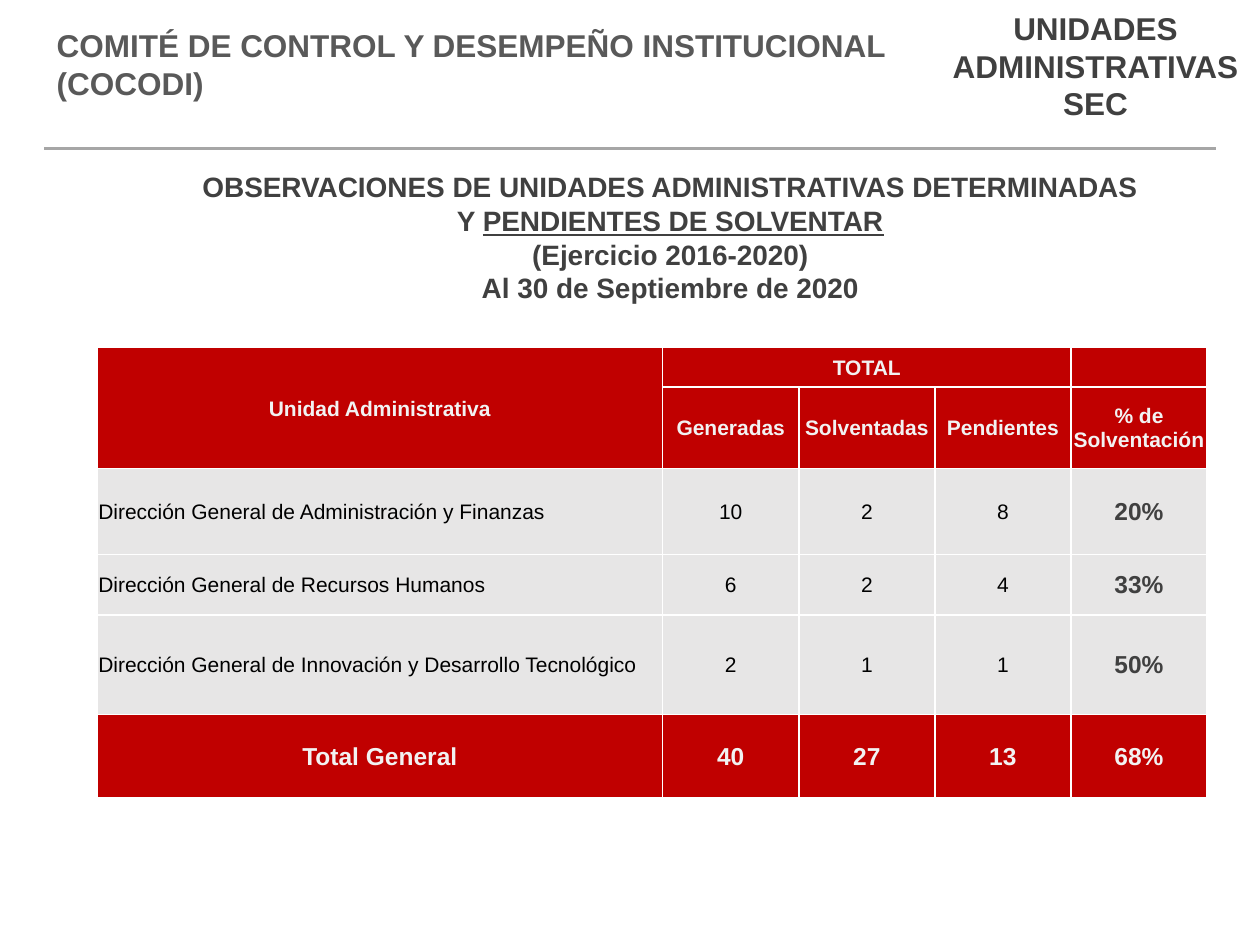
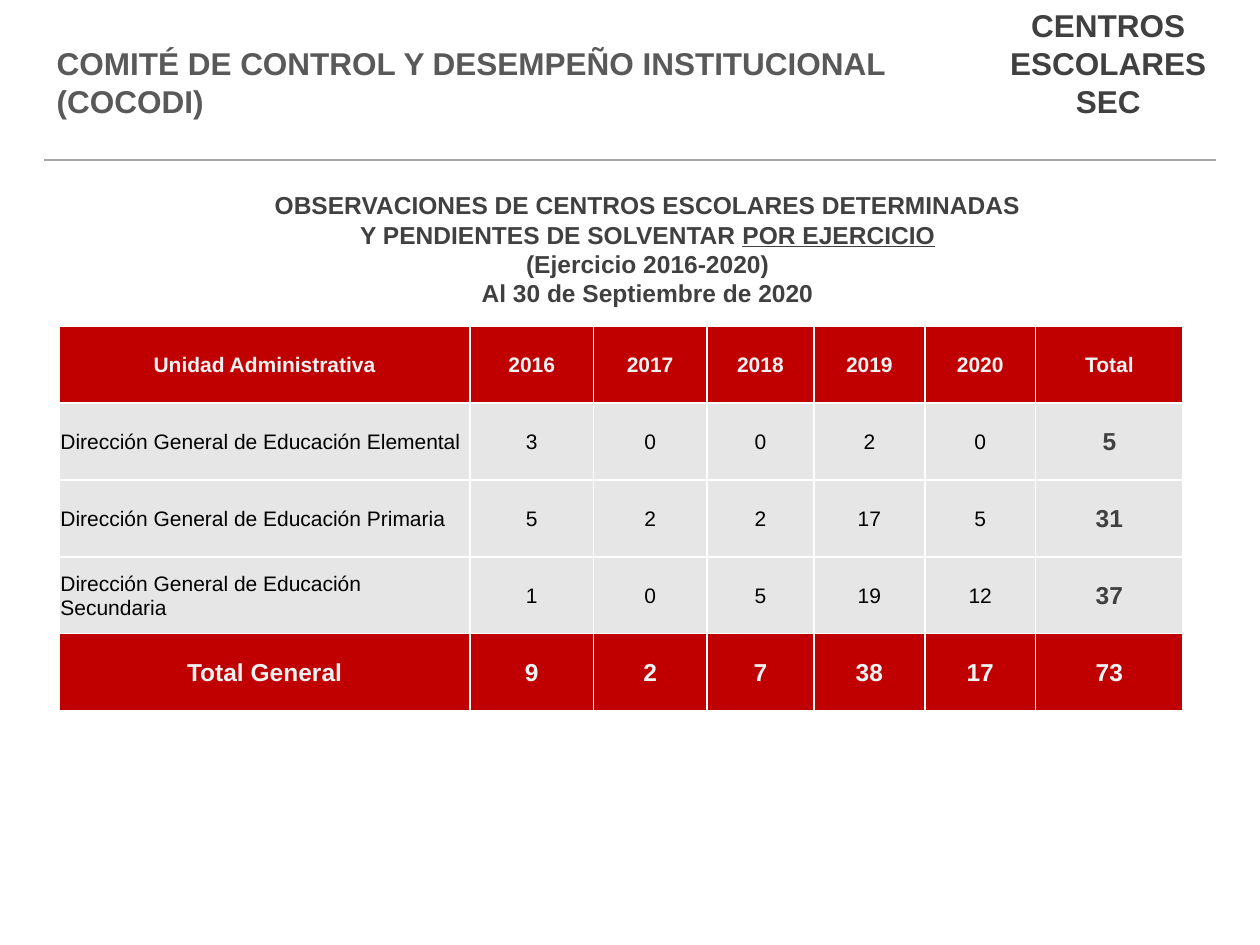
from lxml import etree
from pptx import Presentation
from pptx.dml.color import RGBColor
from pptx.enum.shapes import MSO_CONNECTOR, MSO_SHAPE
from pptx.enum.text import MSO_ANCHOR, MSO_AUTO_SIZE, PP_ALIGN
from pptx.oxml.ns import qn
from pptx.util import Inches, Pt

LEFT, CENTER = PP_ALIGN.LEFT, PP_ALIGN.CENTER
TOP, MIDDLE = MSO_ANCHOR.TOP, MSO_ANCHOR.MIDDLE
RECTANGLE, STRAIGHT = MSO_SHAPE.RECTANGLE, MSO_CONNECTOR.STRAIGHT
NO_FIT, GROW = MSO_AUTO_SIZE.NONE, MSO_AUTO_SIZE.SHAPE_TO_FIT_TEXT

WHITE = RGBColor(0xFF, 0xFF, 0xFF)
BLACK = RGBColor(0x00, 0x00, 0x00)
RED = RGBColor(0xC0, 0x00, 0x00)
PALE = RGBColor(0xF2, 0xF2, 0xF2)
BODY_GRAY = RGBColor(0xE7, 0xE6, 0xE6)
RULE_GRAY = RGBColor(0xA6, 0xA6, 0xA6)
TITLE_GRAY = RGBColor(0x59, 0x59, 0x59)
DARK = RGBColor(0x40, 0x40, 0x40)
FONT = "Arial"

# Content; text between bars is underlined, None is a cell covered by a merge
TITLE = "COMITÉ DE CONTROL Y DESEMPEÑO INSTITUCIONAL (COCODI)"
PERIOD = ["(Ejercicio 2016-2020)", "Al 30 de Septiembre de 2020"]
REPORTS = [
    dict(
        title_top=0.16, rule_y=1.18,
        scope=["UNIDADES", "ADMINISTRATIVAS", "SEC"],
        scope_box=(7.38, 0.02, 2.63, 1.01), scope_fill=None,
        heading=["OBSERVACIONES DE UNIDADES ADMINISTRATIVAS DETERMINADAS",
                 "Y |PENDIENTES DE SOLVENTAR|"],
        heading_box=(1.44, 1.3, 7.76, 1.18), heading_size=16,
        table_at=(0.77, 2.76),
        columns=[4.49] + [1.08] * 4,
        row_heights=[0.31, 0.65, 0.68, 0.48, 0.79, 0.66],
        header_rows=2,
        merges=[((0, 0), (1, 0)), ((0, 1), (0, 3))],
        rows=[
            ("Unidad Administrativa", "TOTAL", None, None, ""),
            (None, "Generadas", "Solventadas", "Pendientes", "% de Solventación"),
            ("Dirección General de Administración y Finanzas", 10, 2, 8, "20%"),
            ("Dirección General de Recursos Humanos", 6, 2, 4, "33%"),
            ("Dirección General de Innovación y Desarrollo Tecnológico", 2, 1, 1, "50%"),
            ("Total General", 40, 27, 13, "68%"),
        ],
    ),
    dict(
        title_top=0.3, rule_y=1.27,
        scope=["CENTROS", "ESCOLARES", "SEC"],
        scope_box=(7.72, 0, 2.15, 1.01), scope_fill=WHITE,
        heading=["OBSERVACIONES DE CENTROS ESCOLARES DETERMINADAS",
                 "Y PENDIENTES DE SOLVENTAR |POR EJERCICIO|"],
        heading_box=(1.26, 1.46, 7.76, 1.04), heading_size=14,
        table_at=(0.47, 2.59),
        columns=[3.26, 0.98, 0.9, 0.85, 0.88, 0.88, 1.17],
        row_heights=[0.61] * 5,
        header_rows=1,
        merges=[],
        rows=[
            ("Unidad Administrativa", 2016, 2017, 2018, 2019, 2020, "Total"),
            ("Dirección General de Educación Elemental", 3, 0, 0, 2, 0, 5),
            ("Dirección General de Educación Primaria", 5, 2, 2, 17, 5, 31),
            ("Dirección General de Educación Secundaria", 1, 0, 5, 19, 12, 37),
            ("Total General", 9, 2, 7, 38, 17, 73),
        ],
    ),
]


def write(frame, lines, size=18, color=DARK, bold=True, align=CENTER):
    for number, line in enumerate(lines):
        paragraph = frame.add_paragraph() if number else frame.paragraphs[0]
        paragraph.alignment = align
        for part_number, part in enumerate(line.split("|")):
            if part_number and not part:
                continue
            run = paragraph.add_run()
            run.text = part
            font = run.font
            font.name, font.size, font.bold = FONT, Pt(size), bold
            font.color.rgb = color
            if part_number % 2:
                font.underline = True


def add_text(slide, box, lines, fill=None, **style):
    place = [Inches(length) for length in box]
    if fill is None:
        holder = slide.shapes.add_textbox(*place)
    else:
        holder = slide.shapes.add_shape(RECTANGLE, *place)
        holder.shadow.inherit = False
        holder.fill.solid()
        holder.fill.fore_color.rgb = fill
        holder.line.fill.background()
    frame = holder.text_frame
    frame.word_wrap, frame.auto_size = True, GROW
    frame.vertical_anchor = TOP
    write(frame, lines, **style)


def add_header(slide, report):
    title = slide.shapes.title
    title.left, title.top = Inches(0.35), Inches(report["title_top"])
    title.width, title.height = Inches(7.02), Inches(0.71)
    frame = title.text_frame
    frame.word_wrap, frame.auto_size = True, NO_FIT
    frame.vertical_anchor = TOP
    write(frame, [TITLE], color=TITLE_GRAY, align=LEFT)

    y = Inches(report["rule_y"])
    rule = slide.shapes.add_connector(STRAIGHT, Inches(0.35), y, Inches(9.65), y)
    rule.line.color.rgb = RULE_GRAY
    rule.line.width = Pt(1.5)
    etree.SubElement(rule._element.spPr, qn("a:effectLst"))


def add_borders(cell):
    properties = cell._tc.get_or_add_tcPr()
    for side in ("lnL", "lnR", "lnT", "lnB"):
        border = etree.SubElement(properties, qn(f"a:{side}"), w=str(Pt(1)))
        solid = etree.SubElement(border, qn("a:solidFill"))
        etree.SubElement(solid, qn("a:srgbClr"), val=str(WHITE))


def cell_style(row, column, report):
    """Text format and fill by role: header, total, unit name, count, result."""
    if row < report["header_rows"]:
        return dict(size=12, color=PALE), RED
    if row == len(report["rows"]) - 1:
        return dict(size=14, color=PALE), RED
    if column == len(report["columns"]) - 1:
        return dict(size=14), BODY_GRAY
    align = CENTER if column else LEFT
    return dict(size=12, color=BLACK, bold=False, align=align), BODY_GRAY


def add_observations(slide, report):
    columns, heights = report["columns"], report["row_heights"]
    left, top = report["table_at"]
    table = slide.shapes.add_table(
        len(heights), len(columns), Inches(left), Inches(top),
        Inches(sum(columns)), Inches(sum(heights))).table
    for column, width in zip(table.columns, columns):
        column.width = Inches(width)
    for row, height in zip(table.rows, heights):
        row.height = Inches(height)
    for first, last in report["merges"]:
        table.cell(*first).merge(table.cell(*last))

    for r, values in enumerate(report["rows"]):
        for c, value in enumerate(values):
            cell = table.cell(r, c)
            style, fill = cell_style(r, c, report)
            add_borders(cell)
            cell.fill.solid()
            cell.fill.fore_color.rgb = fill
            cell.vertical_anchor = MIDDLE
            cell.margin_left = cell.margin_right = cell.margin_top = Inches(0.01)
            cell.margin_bottom = 0
            if value is not None:
                write(cell.text_frame, [str(value)], **style)


def main():
    deck = Presentation()
    deck.slide_width, deck.slide_height = Inches(10), Inches(7.5)
    title_only = deck.slide_layouts[5]
    for report in REPORTS:
        slide = deck.slides.add_slide(title_only)
        add_header(slide, report)
        add_text(slide, report["heading_box"], report["heading"] + PERIOD,
                 size=report["heading_size"])
        add_observations(slide, report)
        add_text(slide, report["scope_box"], report["scope"],
                 fill=report["scope_fill"])
    deck.save("out.pptx")


if __name__ == "__main__":
    main()
